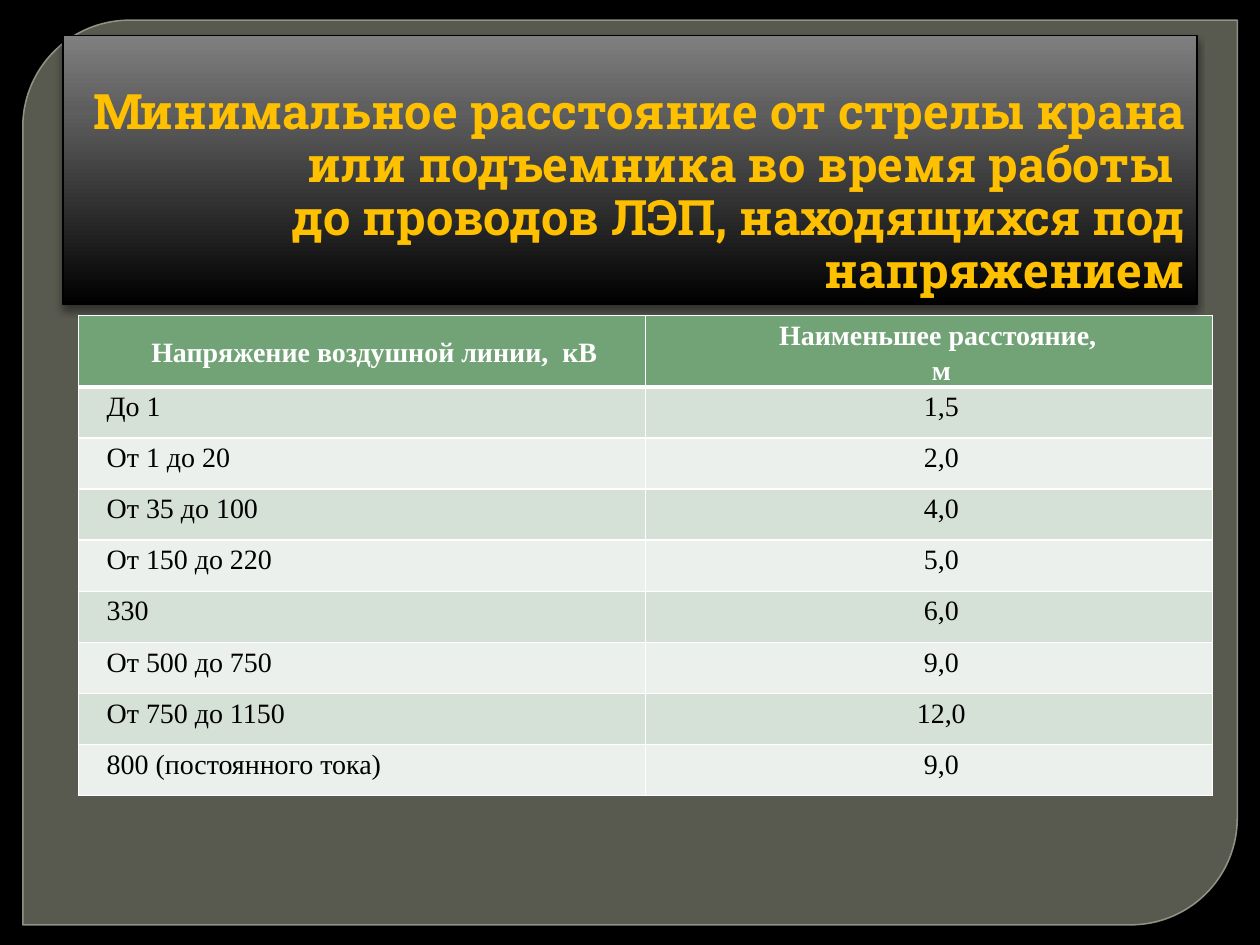
from lxml import etree
from pptx import Presentation
from pptx.dml.color import RGBColor
from pptx.enum.shapes import MSO_SHAPE
from pptx.enum.text import MSO_ANCHOR, PP_ALIGN
from pptx.oxml import parse_xml
from pptx.oxml.ns import nsdecls, qn
from pptx.util import Pt

PANEL, RECTANGLE = MSO_SHAPE.ROUND_2_DIAG_RECTANGLE, MSO_SHAPE.RECTANGLE
LEFT, CENTER, RIGHT = PP_ALIGN.LEFT, PP_ALIGN.CENTER, PP_ALIGN.RIGHT
JUSTIFY = PP_ALIGN.JUSTIFY
TOP, MIDDLE, BOTTOM = MSO_ANCHOR.TOP, MSO_ANCHOR.MIDDLE, MSO_ANCHOR.BOTTOM

COLORS = {
    "black": "000000", "white": "FFFFFF", "panel": "888B7B", "panel_line": "9DA090",
    "title": "FFC000", "header": "72A376", "band_dark": "D5E0D6", "band_light": "EBF0EC",
}
TITLE_GRADIENT = [(0, "000000"), (72, "5E5E5E"), (100, "7F7F7F")]
TITLE = ("Минимальное расстояние от стрелы крана или подъемника во время работы \v"
         "до проводов ЛЭП, находящихся под напряжением")
HEADER = ["Напряжение воздушной линии,  кВ", "Наименьшее расстояние, \nм"]
ROWS = [
    ("До 1", "1,5"), ("От 1 до 20", "2,0"), ("От 35 до 100", "4,0"),
    ("От 150 до 220", "5,0"), ("330", "6,0"), ("От 500 до 750", "9,0"),
    ("От 750 до 1150", "12,0"), ("800 (постоянного тока)", "9,0"),
]
HEADER_HEIGHT, ROW_HEIGHT = 40.5, 29.2


def color(name):
    return RGBColor.from_string(COLORS[name])


def set_all(target, values):
    for name, value in values.items():
        setattr(target, name, value)


def set_alpha(color_format_owner, percent):
    """Make a solid fill partly transparent."""
    for node in color_format_owner.iter(qn("a:srgbClr")):
        etree.SubElement(node, qn("a:alpha"), val=str(percent * 1000))


def set_margins(frame, side, top_bottom):
    set_all(frame, {"margin_left": Pt(side), "margin_right": Pt(side),
                    "margin_top": Pt(top_bottom), "margin_bottom": Pt(top_bottom)})


def style_text(frame, font, para_format, left=0, indent=0):
    font_color = font["color"]
    values = {name: value for name, value in font.items() if name != "color"}
    for para in frame.paragraphs:
        set_all(para, para_format)
        properties = para._p.get_or_add_pPr()
        properties.set("marL", str(Pt(left)))
        properties.set("indent", str(Pt(indent)))
        for span in para.runs:
            set_all(span.font, values)
            span.font.color.rgb = color(font_color)


def add_panel(page, box):
    panel = page.shapes.add_shape(PANEL, *map(Pt, box))
    panel.shadow.inherit = False
    panel.adjustments[0], panel.adjustments[1] = 0.118, 0
    panel.fill.solid()
    panel.fill.fore_color.rgb = color("panel")
    panel.line.color.rgb = color("panel_line")
    panel.line.width = Pt(0.87)
    properties = panel._element.spPr
    set_alpha(properties.find(qn("a:solidFill")), 65)
    set_alpha(properties.find(qn("a:ln")), 88)


def add_title(page, box):
    title = page.shapes.add_shape(RECTANGLE, *map(Pt, box))
    title.shadow.inherit = False
    title.line.color.rgb = color("black")
    title.line.width = Pt(0.75)
    stops = "".join(f'<a:gs pos="{place * 1000}"><a:srgbClr val="{value}"/></a:gs>'
                    for place, value in TITLE_GRADIENT)
    properties = title._element.spPr
    properties.find(qn("a:ln")).addprevious(parse_xml(
        f'<a:gradFill {nsdecls("a")}><a:gsLst>{stops}</a:gsLst>'
        '<a:lin ang="16200000" scaled="0"/></a:gradFill>'))
    properties.find(qn("a:effectLst")).append(parse_xml(
        f'<a:outerShdw {nsdecls("a")} blurRad="{Pt(4)}" dist="{Pt(3)}" dir="5400000" '
        f'rotWithShape="0"><a:srgbClr val="{COLORS["black"]}"><a:alpha val="43000"/>'
        '</a:srgbClr></a:outerShdw>'))
    frame = title.text_frame
    set_all(frame, {"word_wrap": True, "vertical_anchor": BOTTOM})
    set_margins(frame, 7.2, 3.6)
    frame.paragraphs[0].text = TITLE
    style_text(frame, {"name": "Roboto Slab", "size": Pt(27.9), "bold": True, "color": "title"},
               {"alignment": RIGHT, "line_spacing": 0.9}, left=4.32)


def set_borders(cell, bottom_width):
    properties = cell._tc.get_or_add_tcPr()
    widths = {"lnL": 1, "lnR": 1, "lnT": 1, "lnB": bottom_width}
    for place, (side, width) in enumerate(widths.items()):
        properties.insert(place, parse_xml(
            f'<a:{side} {nsdecls("a")} w="{Pt(width)}"><a:solidFill>'
            f'<a:srgbClr val="{COLORS["white"]}"/></a:solidFill></a:{side}>'))


def fill_cell(cell, text, fill, font_color, alignment, is_header):
    cell.text = text
    cell.fill.solid()
    cell.fill.fore_color.rgb = color(fill)
    cell.vertical_anchor = MIDDLE if is_header else TOP
    set_margins(cell, 2, 0)
    set_borders(cell, 3 if is_header else 1)
    style_text(cell.text_frame,
               {"name": "Times New Roman", "size": Pt(16), "bold": is_header,
                "color": font_color},
               {"alignment": alignment, "line_spacing": 1.15}, indent=14.2)


def add_distance_table(page, box):
    table = page.shapes.add_table(len(ROWS) + 1, len(HEADER), *map(Pt, box)).table
    for column in table.columns:
        column.width = Pt(box[2] / len(HEADER))
    for number, texts in enumerate([HEADER, *ROWS]):
        is_header = number == 0
        table.rows[number].height = Pt(HEADER_HEIGHT if is_header else ROW_HEIGHT)
        band = "band_dark" if number % 2 else "band_light"
        first_alignment = CENTER if is_header else LEFT if number < 3 else JUSTIFY
        for place, text in enumerate(texts):
            fill_cell(table.cell(number, place), text, "header" if is_header else band,
                      "white" if is_header else "black",
                      CENTER if place else first_alignment, is_header)


def main():
    deck = Presentation()
    set_all(deck, {"slide_width": Pt(720), "slide_height": Pt(540)})
    page = deck.slides.add_slide(deck.slide_layouts[6])
    page.background.fill.solid()
    page.background.fill.fore_color.rgb = color("black")
    add_panel(page, (13, 11.5, 694, 517))
    add_title(page, (36, 20.2, 648, 154))
    add_distance_table(page, (44.8, 180.2, 648, HEADER_HEIGHT + ROW_HEIGHT * len(ROWS)))
    deck.save("out.pptx")


if __name__ == "__main__":
    main()
